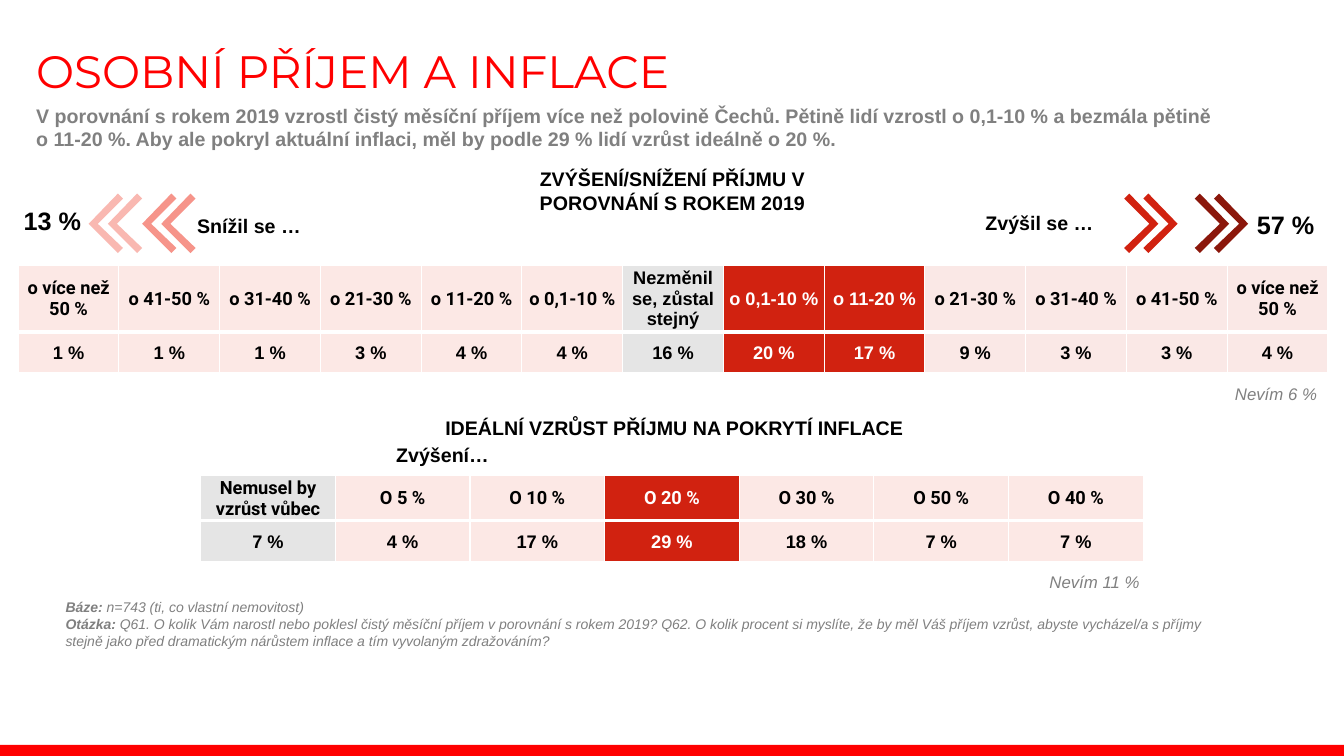
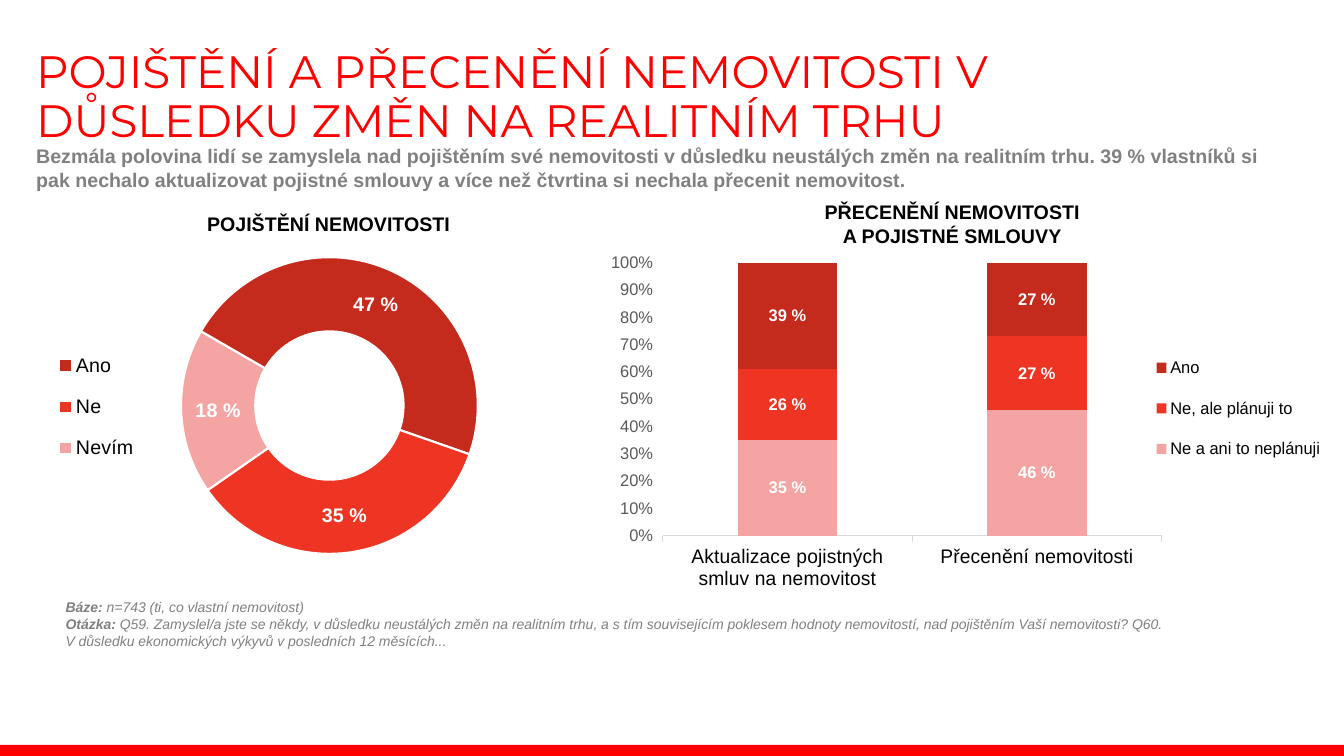
import pptx
import pptx.chart.data
import pptx.dml.color
import pptx.enum.chart
import pptx.enum.shapes
import pptx.enum.text
import pptx.oxml
import pptx.oxml.ns
import pptx.util

Inches = pptx.util.Inches
Pt = pptx.util.Pt
RGB = pptx.dml.color.RGBColor.from_string
ALIGN = pptx.enum.text.PP_ALIGN
MIDDLE = pptx.enum.text.MSO_ANCHOR.MIDDLE
KIND = pptx.enum.chart.XL_CHART_TYPE
SIDE = pptx.enum.chart.XL_LEGEND_POSITION
NS = pptx.oxml.ns.nsdecls("a", "c")
HUES = {
    "red": "FF0000", "gray": "808080", "black": "000000", "white": "FFFFFF",
    "silver": "E5E5E5", "axis": "595959", "rule": "D9D9D9",
    "brick": "D12210", "wine": "8B170B", "coral": "EF4E3D",
    "salmon": "F6948A", "blush": "F9B8B1",
    "yes": "C52B1D", "no": "EE3423", "other": "F4A5A3",
}
PERCENT = '#,##0" %";\\-#,##0'


def label(slide, words, left, top, wide, high=0.44, size=14, hue="black",
          bold=True, face="Arial"):
    """Add a one-paragraph text box, centred in the middle, and return its frame."""
    box = slide.shapes.add_textbox(Inches(left), Inches(top), Inches(wide), Inches(high))
    frame = box.text_frame
    frame.word_wrap = True
    frame.vertical_anchor = MIDDLE
    para = frame.paragraphs[0]
    para.text = words
    para.alignment = ALIGN.CENTER
    para.font.size = Pt(size)
    para.font.name = face
    para.font.bold = bold
    para.font.color.rgb = RGB(HUES[hue])
    return frame


def place(part, spot, index):
    """Give a plot area or legend a fixed place, as fractions of the chart."""
    for old in part.xpath("c:layout"):
        part.remove(old)
    inner = '<c:layoutTarget val="inner"/>' if index == 0 else ""
    modes = '<c:xMode val="edge"/><c:yMode val="edge"/>'
    sizes = "".join(f'<c:{key} val="{val}"/>' for key, val in zip("xywh", spot))
    part.insert(index, pptx.oxml.parse_xml(
        f"<c:layout {NS}><c:manualLayout>{inner}{modes}{sizes}</c:manualLayout></c:layout>"))


deck = pptx.Presentation()
deck.slide_width = Inches(13.33)
deck.slide_height = Inches(7.5)

# Shared frame: band, title, lead and footnote
pages = [
    ("OSOBNÍ PŘÍJEM A INFLACE", 12.69,
     "V porovnání s rokem 2019 vzrostl čistý měsíční příjem více než polovině Čechů. "
     "Pětině lidí vzrostl o 0,1-10 % a bezmála pětině o 11-20 %. Aby ale pokryl aktuální "
     "inflaci, měl by podle 29 % lidí vzrůst ideálně o 20 %.", 0.98, 11.92,
     "Q61. O kolik Vám narostl nebo poklesl čistý měsíční příjem v porovnání s rokem 2019? "
     "Q62. O kolik procent si myslíte, že by měl Váš příjem vzrůst, abyste vycházel/a "
     "s příjmy stejně jako před dramatickým nárůstem inflace a tím vyvolaným zdražováním?",
     11.58),
    ("POJIŠTĚNÍ A PŘECENĚNÍ NEMOVITOSTI V DŮSLEDKU ZMĚN NA REALITNÍM TRHU", 10.45,
     "Bezmála polovina lidí se zamyslela nad pojištěním své nemovitosti v důsledku "
     "neustálých změn na realitním trhu. 39 % vlastníků si pak nechalo aktualizovat "
     "pojistné smlouvy a více než čtvrtina si nechala přecenit nemovitost.", 1.38, 12.69,
     "Q59. Zamyslel/a jste se někdy, v důsledku neustálých změn na realitním trhu, a s tím "
     "souvisejícím poklesem hodnoty nemovitostí, nad pojištěním Vaší nemovitosti? Q60. "
     "V důsledku ekonomických výkyvů v posledních 12 měsících...", 10.98),
]
for title, span, lead, top, wide, asked, reach in pages:
    slide = deck.slides.add_slide(deck.slide_layouts[6])
    band = slide.shapes.add_shape(pptx.enum.shapes.MSO_SHAPE.RECTANGLE, 0, Inches(7.39),
                                  deck.slide_width, Inches(0.11))
    band.shadow.inherit = False
    band.fill.solid()
    band.fill.fore_color.rgb = RGB(HUES["red"])
    band.line.fill.background()
    head = label(slide, title, 0.26, 0.44, span, 0.53, 32.4, "red", False, "Montserrat")
    head.paragraphs[0].line_spacing = 0.9
    body = label(slide, lead, 0.26, top, wide, 0.7, hue="gray")
    note = label(slide, "", 0.65, 5.94, reach, 0.5, 10, "gray", False)
    note.margin_left = note.margin_right = note.margin_top = note.margin_bottom = 0
    note.add_paragraph()
    lines = [("Báze:", " n=743 (ti, co vlastní nemovitost)"), ("Otázka: ", asked)]
    for para, (key, words) in zip(note.paragraphs, lines):
        para.font.size = Pt(10)
        para.font.name = "Arial"
        para.font.italic = True
        para.font.color.rgb = RGB(HUES["gray"])
        run = para.add_run()
        run.text = key
        run.font.bold = True
        para.add_run().text = words
    for frame in (head, body, note):
        frame.vertical_anchor = pptx.enum.text.MSO_ANCHOR.TOP
        for para in frame.paragraphs:
            para.alignment = ALIGN.LEFT

income, home = deck.slides

# Slide 1: headings and shares
for words, left, top, wide, size in [
    ("Snížil se …", 0.64, 2.02, 3.66, 14),
    ("ZVÝŠENÍ/SNÍŽENÍ PŘÍJMU V POROVNÁNÍ S ROKEM 2019", 4.84, 1.67, 3.66, 14),
    ("Zvýšil se …", 8.48, 1.99, 3.66, 14),
    ("IDEÁLNÍ VZRŮST PŘÍJMU NA POKRYTÍ INFLACE", 4.31, 4.02, 4.76, 14),
    ("Zvýšení…", 2.56, 4.29, 3.66, 14),
    ("13 %", 0.07, 1.97, 0.9, 18),
    ("57 %", 12.3, 2.01, 0.9, 18),
]:
    label(income, words, left, top, wide, size=size)

for words, left, top in [("Nevím 6 %", 12.15, 3.76), ("Nevím 11 %", 10.31, 5.62)]:
    para = label(income, words, left, top, 1.18, 0.3, 12, "gray", False).paragraphs[0]
    para.alignment = ALIGN.LEFT
    para.font.italic = True

# Slide 1: double chevrons; way is 1 for right, -1 for left
outline = [(0.34, 0.05), (0.29, 0), (0, 0.3), (0.29, 0.59), (0.34, 0.54), (0.09, 0.3)]
for tip, way, hue in [(12.19, 1, "wine"), (11.49, 1, "brick"),
                      (1.41, -1, "salmon"), (0.88, -1, "blush")]:
    for shift in (0, 0.19):
        dots = [(Inches(tip + shift - way * x), Inches(1.92 + y)) for x, y in outline]
        pen = income.shapes.build_freeform(*dots[0])
        pen.add_line_segments(dots[1:], close=True)
        arrow = pen.convert_to_shape()
        arrow.shadow.inherit = False
        arrow.fill.solid()
        arrow.fill.fore_color.rgb = RGB(HUES[hue])
        arrow.line.fill.background()

# Slide 1: tables; one fill letter per column, and the columns headed in Arial
fills = {"c": ("coral", 13), "b": ("brick", 10), "B": ("brick", 100), "s": ("silver", 100)}
steps = ["o 41-50 %", "o 31-40 %", "o 21-30 %", "o 11-20 %", "o 0,1-10 %"]
most = "o více než 50 %"
for left, top, wide, tall, heads, shares, codes, plain in [
    (0.18, 2.63, 12.99, 0.66,
     [most, *steps, "Nezměnil se, zůstal stejný", *steps[::-1], most],
     [1, 1, 1, 3, 4, 4, 16, 20, 17, 9, 3, 3, 4], "ccccccsBBbbbb", (6, 7, 8)),
    (1.99, 4.72, 9.35, 0.44,
     ["Nemusel by vzrůst vůbec", "O 5 %", "O 10 %", "O 20 %", "O 30 %", "O 50 %", "O 40 %"],
     [7, 4, 17, 29, 18, 7, 7], "sccBccc", ()),
]:
    grid = income.shapes.add_table(2, len(heads), Inches(left), Inches(top),
                                   Inches(wide), Inches(tall + 0.41)).table
    grid.first_row = grid.horz_banding = False
    grid.rows[0].height = Inches(tall)
    grid.rows[1].height = Inches(0.41)
    for col, code in enumerate(codes):
        grid.columns[col].width = Inches(wide / len(heads))
        hue, alpha = fills[code]
        for row, words in enumerate((heads[col], f"{shares[col]} %")):
            cell = grid.cell(row, col)
            cell.margin_left = cell.margin_right = cell.margin_top = Inches(0.01)
            cell.margin_bottom = 0
            cell.vertical_anchor = MIDDLE
            cell.fill.solid()
            cell.fill.fore_color.rgb = RGB(HUES[hue])
            prop = cell._tc.get_or_add_tcPr()
            if alpha < 100:
                prop.xpath("a:solidFill/a:srgbClr")[0].append(
                    pptx.oxml.parse_xml(f'<a:alpha {NS} val="{alpha * 1000}"/>'))
            for spot, edge in enumerate("LRTB"):
                thick = Pt(3 if row == 0 and edge == "B" else 1)
                prop.insert(spot, pptx.oxml.parse_xml(
                    f'<a:ln{edge} {NS} w="{thick}"><a:solidFill>'
                    f'<a:srgbClr val="{HUES["white"]}"/></a:solidFill></a:ln{edge}>'))
            para = cell.text_frame.paragraphs[0]
            para.text = words
            para.alignment = ALIGN.CENTER
            para.font.size = Pt(13)
            para.font.bold = True
            para.font.name = "Arial" if row or col in plain else "Roboto"
            para.font.color.rgb = RGB(HUES["white" if code == "B" else "black"])

# Slide 2: charts
charts = []
for kind, cats, series, box, size, side, plot, key in [
    (KIND.DOUGHNUT, ["Ano", "Ne", "Nevím"], [("Series 1", (47, 35, 18))],
     (-0.16, 2.23, 6.22, 3.93), 14, SIDE.LEFT,
     (0.284, 0.082, 0.534, 0.749), (0.11, 0.28, 0.14, 0.36)),
    (KIND.COLUMN_STACKED_100,
     ["Aktualizace pojistných smluv na nemovitost", "Přecenění nemovitosti"],
     [("Ne a ani to neplánuji", (35, 46)), ("Ne, ale plánuji to", (26, 27)),
      ("Ano", (39, 27))],
     (6.06, 2.35, 7.13, 4.1), 12, SIDE.RIGHT,
     (0.052, 0.063, 0.709, 0.66), (0.755, 0.24, 0.24, 0.35)),
]:
    data = pptx.chart.data.CategoryChartData()
    data.categories = cats
    for name, vals in series:
        data.add_series(name, vals)
    chart = home.shapes.add_chart(kind, *map(Inches, box), data).chart
    chart.has_title = False
    chart.font.size = Pt(10)
    chart.font.name = "Arial"
    chart.font.color.rgb = RGB(HUES["black"])
    chart.has_legend = True
    chart.legend.position = side
    chart.legend.include_in_layout = False
    chart.legend.font.size = Pt(size)
    chart.legend.font.name = "Arial"
    chart.legend.font.color.rgb = RGB(HUES["black"])
    place(chart.element.xpath(".//c:plotArea")[0], plot, 0)
    place(chart.element.xpath(".//c:legend")[0], key, 1)
    chart.element.xpath("c:chart")[0].addnext(pptx.oxml.parse_xml(
        f"<c:spPr {NS}><a:noFill/><a:ln><a:noFill/></a:ln></c:spPr>"))
    chart.plots[0].has_data_labels = True
    tags = chart.plots[0].data_labels
    tags.show_value = True
    tags.show_percentage = False
    tags.number_format = PERCENT
    tags.number_format_is_linked = False
    tags.font.size = Pt(size)
    tags.font.name = "Arial"
    tags.font.bold = True
    tags.font.color.rgb = RGB(HUES["white"])
    charts.append(chart)

ring, stack = charts
ring.plots[0].vary_by_categories = True
ring.element.xpath(".//c:firstSliceAng")[0].set("val", "300")
ring.element.xpath(".//c:holeSize")[0].set("val", "53")
for index, hue in enumerate(("yes", "no", "other")):
    form = ring.plots[0].series[0].points[index].format
    form.fill.solid()
    form.fill.fore_color.rgb = RGB(HUES[hue])
    form.line.color.rgb = RGB(HUES["white"])
    form.line.width = Pt(1.5)

bars = stack.plots[0]
bars.vary_by_categories = False
bars.gap_width = 150
bars.overlap = 100
for part, hue in zip(bars.series, ("other", "no", "yes")):
    part.format.fill.solid()
    part.format.fill.fore_color.rgb = RGB(HUES[hue])
for axis, size, hue in [(stack.category_axis, 14, "black"), (stack.value_axis, 12, "axis")]:
    axis.has_major_gridlines = False
    axis.tick_labels.font.size = Pt(size)
    axis.tick_labels.font.name = "Arial"
    axis.tick_labels.font.color.rgb = RGB(HUES[hue])
stack.category_axis.format.line.color.rgb = RGB(HUES["rule"])
stack.category_axis.format.line.width = Pt(0.75)
stack.value_axis.format.line.fill.background()
stack.value_axis.tick_labels.number_format = "0%"
stack.value_axis.tick_labels.number_format_is_linked = False

# Slide 2: chart headings
label(home, "POJIŠTĚNÍ NEMOVITOSTI", 1.43, 2, 3.66)
label(home, "PŘECENĚNÍ NEMOVITOSTI A POJISTNÉ SMLOUVY", 8.06, 2, 2.77)

deck.save("out.pptx")
